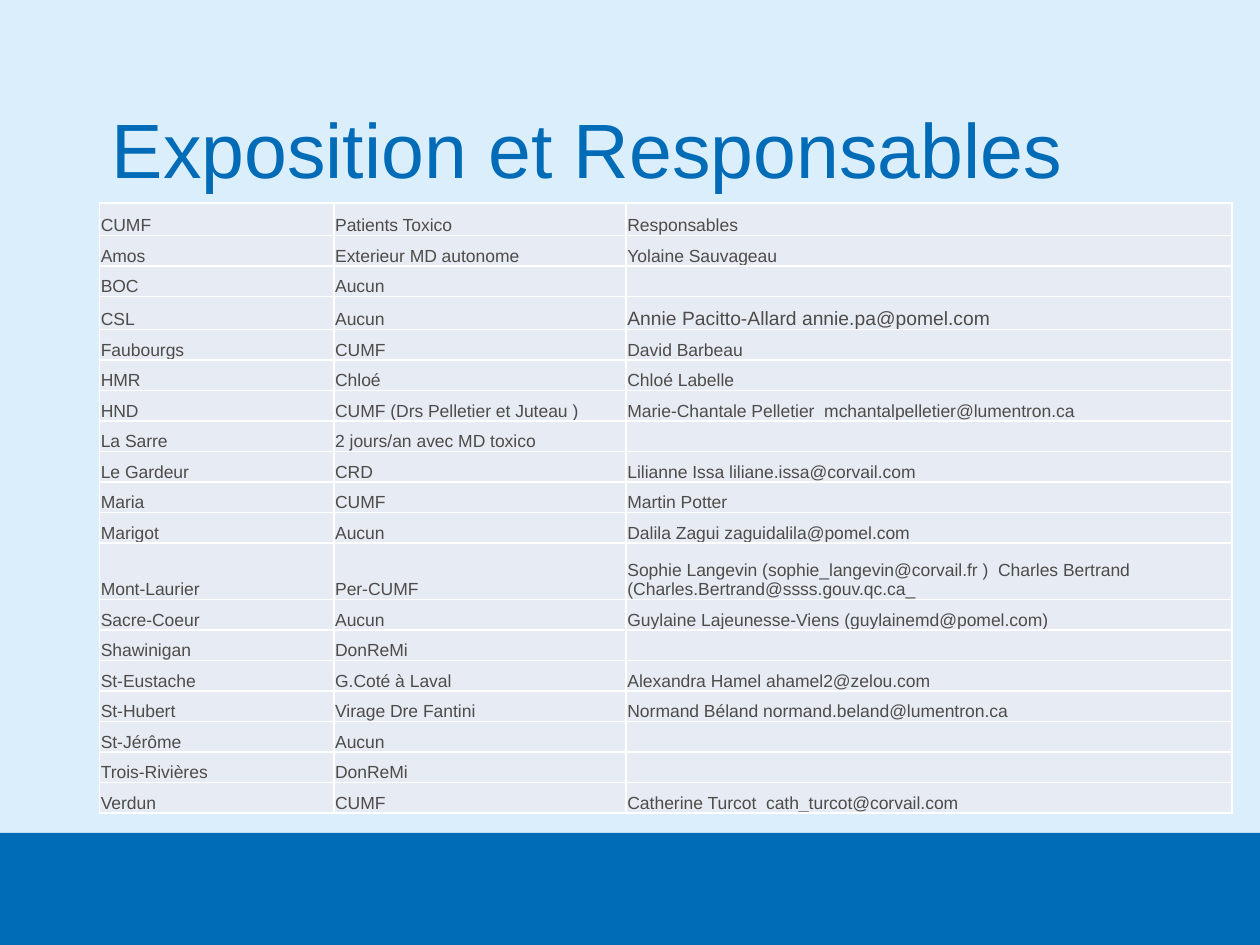
from lxml.etree import SubElement
from pptx import Presentation
from pptx.dml.color import RGBColor
from pptx.enum.shapes import MSO_SHAPE
from pptx.enum.text import MSO_ANCHOR as ANCHOR
from pptx.oxml.ns import qn
from pptx.util import Inches, Pt

BLUE = "006BB6"
WHITE = "FFFFFF"
CELL_FILL = "E7EBF3"
CELL_TEXT = "4D4C4A"


def color(hex_string):
    return RGBColor.from_string(hex_string)


def add_borders(cell):
    properties = cell._tc.get_or_add_tcPr()
    for side in ("a:lnL", "a:lnR", "a:lnT", "a:lnB"):
        line = SubElement(properties, qn(side), w=str(Pt(1)))
        fill = SubElement(line, qn("a:solidFill"))
        SubElement(fill, qn("a:srgbClr"), val=WHITE)


presentation = Presentation()
presentation.slide_width = Inches(10)
presentation.slide_height = Inches(7.5)
slide = presentation.slides.add_slide(presentation.slide_layouts[6])

# Background and bottom band
slide.background.fill.solid()
slide.background.fill.fore_color.rgb = color("DBEEFC")
band = slide.shapes.add_shape(
    MSO_SHAPE.RECTANGLE, Inches(0), Inches(6.61), Inches(10), Inches(0.89))
band.shadow.inherit = False
band.fill.solid()
band.fill.fore_color.rgb = color(BLUE)
band.line.fill.background()

# Table of sites, patients and people in charge
rows = [
    ("CUMF", "Patients Toxico", "Responsables"),
    ("Amos", "Exterieur MD autonome", "Yolaine Sauvageau"),
    ("BOC", "Aucun", ""),
    ("CSL", "Aucun", "Annie Pacitto-Allard annie.pa@pomel.com"),
    ("Faubourgs", "CUMF", "David Barbeau"),
    ("HMR", "Chloé", "Chloé Labelle"),
    ("HND", "CUMF (Drs Pelletier et Juteau )",
     "Marie-Chantale Pelletier  mchantalpelletier@lumentron.ca"),
    ("La Sarre", "2 jours/an avec MD toxico", ""),
    ("Le Gardeur", "CRD", "Lilianne Issa liliane.issa@corvail.com"),
    ("Maria", "CUMF", "Martin Potter"),
    ("Marigot", "Aucun", "Dalila Zagui zaguidalila@pomel.com"),
    ("Mont-Laurier", "Per-CUMF",
     "Sophie Langevin (sophie_langevin@corvail.fr )  Charles Bertrand "
     "(Charles.Bertrand@ssss.gouv.qc.ca_"),
    ("Sacre-Coeur", "Aucun",
     "Guylaine Lajeunesse-Viens (guylainemd@pomel.com)"),
    ("Shawinigan", "DonReMi", ""),
    ("St-Eustache", "G.Coté à Laval", "Alexandra Hamel ahamel2@zelou.com"),
    ("St-Hubert", "Virage Dre Fantini",
     "Normand Béland normand.beland@lumentron.ca"),
    ("St-Jérôme", "Aucun", ""),
    ("Trois-Rivières", "DonReMi", ""),
    ("Verdun", "CUMF", "Catherine Turcot  cath_turcot@corvail.com"),
]
column_widths = [1.86, 2.32, 4.81]
table_height = 4.85
special_heights = {0: 0.26, 3: 0.26, 11: 0.45}
regular_height = ((table_height - sum(special_heights.values()))
                  / (len(rows) - len(special_heights)))
larger_cell = (3, 2)

table = slide.shapes.add_table(
    len(rows), len(column_widths), Inches(0.79), Inches(1.61),
    Inches(sum(column_widths)), Inches(table_height)).table
table.first_row = False
table.horz_banding = False
for column, width in zip(table.columns, column_widths):
    column.width = Inches(width)

for row_index, texts in enumerate(rows):
    table.rows[row_index].height = Inches(
        special_heights.get(row_index, regular_height))
    for column_index, text in enumerate(texts):
        cell = table.cell(row_index, column_index)
        add_borders(cell)
        cell.fill.solid()
        cell.fill.fore_color.rgb = color(CELL_FILL)
        cell.margin_left = cell.margin_right = cell.margin_top = Inches(0.01)
        cell.margin_bottom = 0
        cell.vertical_anchor = ANCHOR.BOTTOM
        paragraph = cell.text_frame.paragraphs[0]
        if not text:
            # Keep the empty line as small as the other rows
            SubElement(paragraph._p, qn("a:endParaRPr"), sz="1000")
            continue
        paragraph.text = text
        font = paragraph.runs[0].font
        font.name = "Arial"
        font.size = Pt(11 if (row_index, column_index) == larger_cell else 10)
        font.color.rgb = color(CELL_TEXT)

# Title
title = slide.shapes.add_textbox(
    Inches(0.79), Inches(0.13), Inches(8.45), Inches(1.47))
title.text_frame.word_wrap = True
title.text_frame.vertical_anchor = ANCHOR.BOTTOM
paragraph = title.text_frame.paragraphs[0]
paragraph.text = "Exposition et Responsables"
paragraph.line_spacing = 0.9
font = paragraph.runs[0].font
font.name = "Arial"
font.size = Pt(44)
font.color.rgb = color(BLUE)

presentation.save("out.pptx")
